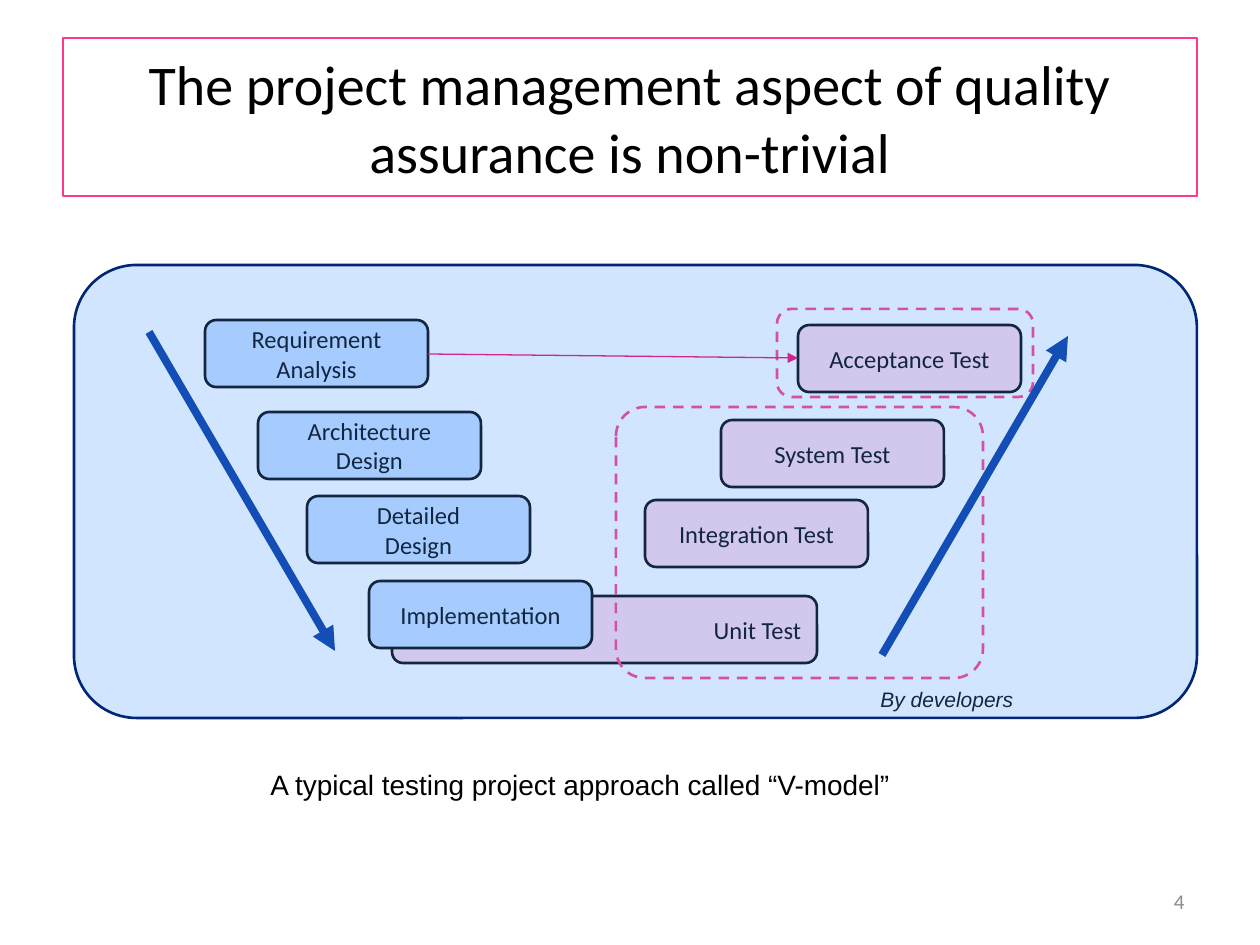
import pptx
import pptx.util
import pptx.dml.color
import pptx.enum.dml
import pptx.enum.shapes
import pptx.enum.text
import pptx.oxml
import pptx.oxml.ns
import lxml.etree

PX = 914400 / 126
ROUND = pptx.enum.shapes.MSO_SHAPE.ROUNDED_RECTANGLE
RECT = pptx.enum.shapes.MSO_SHAPE.RECTANGLE
ALIGN = pptx.enum.text.PP_ALIGN
MIDDLE = pptx.enum.text.MSO_ANCHOR.MIDDLE
TOP = pptx.enum.text.MSO_ANCHOR.TOP
rgb = pptx.dml.color.RGBColor.from_string
qn = pptx.oxml.ns.qn

BLUE, ROSE, PINK = "C3DDFF", "FFD7E8", "FF388C"

deck = pptx.Presentation()
deck.slide_width = pptx.util.Inches(10)
deck.slide_height = pptx.util.Inches(7.5)
slide = deck.slides.add_slide(deck.slide_layouts[6])
shapes = slide.shapes


def add_box(spot, text="", kind=ROUND, fill=None, line=None, width=1.5,
            dash=False, size=14, font="Calibri", color="000000",
            align=ALIGN.CENTER, anchor=MIDDLE, italic=False, wrap=True):
    """Add a shape, or a text box when kind is None; spot is in px."""
    place = [round(n * PX) for n in spot]
    if kind is None:
        box = shapes.add_textbox(*place)
    else:
        box = shapes.add_shape(kind, *place)
        box.shadow.inherit = False
        if fill:
            box.fill.solid()
            box.fill.fore_color.rgb = rgb(fill)
        else:
            box.fill.background()
        box.line.color.rgb = rgb(line)
        box.line.width = pptx.util.Pt(width)
        if dash:
            box.line.dash_style = pptx.enum.dml.MSO_LINE.DASH
    frame = box.text_frame
    frame.word_wrap = wrap
    frame.vertical_anchor = anchor
    if text:
        frame.text = text
        for para in frame.paragraphs:
            para.alignment = align
            face = para.font
            face.size = pptx.util.Pt(size)
            face.name = font
            face.italic = italic
            face.color.rgb = rgb(color)
    return box


# Unit test sits behind the implementation box
add_box((392, 596, 425, 67), "Unit Test", fill=ROSE, line="000000",
        align=ALIGN.RIGHT)

add_box((63, 38, 1134, 158),
        "The project management aspect of quality assurance is non-trivial",
        kind=RECT, line=PINK, width=0.75, size=32)
add_box((903, 876, 294, 50), "4", kind=None, size=12, color="8C8C8C",
        align=ALIGN.RIGHT)
add_box((258, 761, 653, 47),
        "A typical testing project approach called “V-model”",
        kind=None, size=16, font="Arial", align=ALIGN.LEFT, anchor=TOP,
        wrap=False)

# Dashed groups: by users, by developers
add_box((777, 309, 256, 88), line=PINK, dash=True)
group = add_box((616, 407, 367, 271), line=PINK, dash=True)
group.adjustments[0] = 0.107
add_box((868, 680, 186, 38), "By developers", kind=None, size=12,
        font="Arial", align=ALIGN.LEFT, anchor=TOP, italic=True)

# Both arms of the V
steps = [
    (205, 320, "Requirement Analysis", BLUE),
    (258, 412, "Architecture Design", BLUE),
    (307, 496, "Detailed\nDesign", BLUE),
    (369, 581, "Implementation", BLUE),
    (645, 500, "Integration Test", ROSE),
    (721, 420, "System Test", ROSE),
    (798, 325, "Acceptance Test", ROSE),
]
for left, top, name, fill in steps:
    add_box((left, top, 223, 67), name, fill=fill, line="000000")

arrows = [
    ((149, 332, 335, 651), "00349E", 4.5),
    ((428, 354, 798, 358), "F90069", 0.75),
    ((882, 655, 1068, 336), "00349E", 4.5),
]
for ends, color, width in arrows:
    arrow = shapes.add_connector(pptx.enum.shapes.MSO_CONNECTOR.STRAIGHT,
                                 *[round(n * PX) for n in ends])
    arrow.line.color.rgb = rgb(color)
    arrow.line.width = pptx.util.Pt(width)
    stroke = arrow.line._get_or_add_ln()
    lxml.etree.SubElement(stroke, qn("a:tailEnd"), type="triangle")
    lxml.etree.SubElement(arrow._element.spPr, qn("a:effectLst"))

# Clear blue panel laid over the whole V
panel = add_box((74, 265, 1123, 453), fill="4C99FF", line="002776")
panel.adjustments[0] = 0.138
tint = panel._element.spPr.find(qn("a:solidFill"))[0]
lxml.etree.SubElement(tint, qn("a:alpha"), val="25000")

deck.save("out.pptx")
